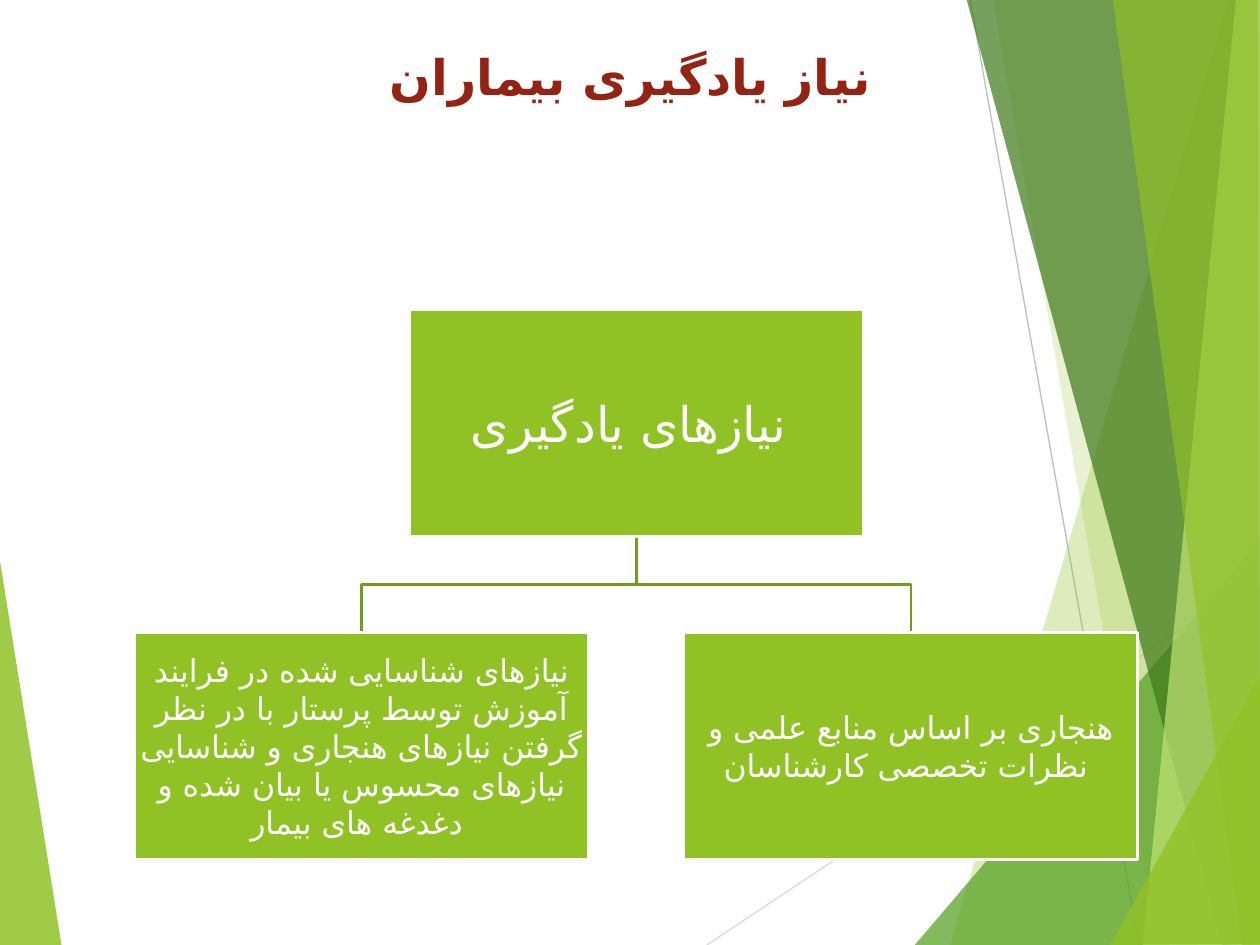
from lxml import etree
from pptx import Presentation
from pptx.dml.color import RGBColor
from pptx.enum.lang import MSO_LANGUAGE_ID
from pptx.enum.shapes import MSO_CONNECTOR, MSO_SHAPE
from pptx.enum.text import MSO_ANCHOR, PP_ALIGN
from pptx.oxml.ns import qn
from pptx.util import Inches, Pt

STRAIGHT = MSO_CONNECTOR.STRAIGHT
RECTANGLE = MSO_SHAPE.RECTANGLE
MIDDLE = MSO_ANCHOR.MIDDLE
CENTER = PP_ALIGN.CENTER
PERSIAN = MSO_LANGUAGE_ID.FARSI

GREEN, BRANCH_GREEN = "90C226", "739B1E"
WHITE, RED = "FFFFFF", "932313"
LINE_WIDTH = 1.5


def color(hex_string):
    return RGBColor.from_string(hex_string)


class SlideBuilder:
    """Holds the style and the current slide."""

    title_font = "Arial"
    body_font = "Roboto"
    persian_font = "DejaVu Sans"

    def __init__(self, presentation):
        self.slide = presentation.slides.add_slide(presentation.slide_layouts[5])
        self.shapes = self.slide.shapes

    def format_text(self, text_frame, text, size, font, hex_color, bold=False, inset=None):
        text_frame.text = text
        text_frame.word_wrap = True
        text_frame.vertical_anchor = MIDDLE
        if inset is not None:
            text_frame.margin_left = text_frame.margin_right = Inches(inset)
            text_frame.margin_top = text_frame.margin_bottom = Inches(inset)
        paragraph = text_frame.paragraphs[0]
        paragraph.alignment = CENTER
        run = paragraph.runs[0]
        run.font.size = Pt(size)
        run.font.bold = bold
        run.font.name = font
        run.font.language_id = PERSIAN
        run.font.color.rgb = color(hex_color)
        # Persian letters take their font from the complex-script entry
        complex_font = etree.SubElement(run.font._element, qn("a:cs"))
        complex_font.set("typeface", self.persian_font)

    def title(self, text, left, top, width, height):
        title = self.shapes.title
        title.left, title.top = Inches(left), Inches(top)
        title.width, title.height = Inches(width), Inches(height)
        self.format_text(title.text_frame, text, 28, self.title_font, RED, bold=True)
        # Bring the title in front of the backdrop
        title.element.getparent().append(title.element)

    def outline(self, points, close):
        start, *rest = [(round(x * 100), round(y * 100)) for x, y in points]
        builder = self.shapes.build_freeform(*start, scale=Inches(0.01))
        builder.add_line_segments(rest, close=close)
        shape = builder.convert_to_shape()
        shape.shadow.inherit = False
        return shape

    def facet(self, points, hex_color, opacity):
        shape = self.outline(points, close=True)
        shape.fill.solid()
        shape.fill.fore_color.rgb = color(hex_color)
        shape.line.fill.background()
        fill_color = shape.element.spPr.find(qn("a:solidFill"))[0]
        etree.SubElement(fill_color, qn("a:alpha")).set("val", str(opacity * 1000))

    def branch(self, points):
        shape = self.outline(points, close=False)
        shape.fill.background()
        shape.line.color.rgb = color(BRANCH_GREEN)
        shape.line.width = Pt(LINE_WIDTH)

    def line(self, start, end, hex_color):
        connector = self.shapes.add_connector(
            STRAIGHT, *(Inches(value) for value in (*start, *end)))
        connector.line.color.rgb = color(hex_color)
        connector.line.width = Pt(0.75)
        etree.SubElement(connector.element.spPr, qn("a:effectLst"))

    def box(self, text, left, top, width, height, size, inset):
        shape = self.shapes.add_shape(
            RECTANGLE, *(Inches(value) for value in (left, top, width, height)))
        shape.shadow.inherit = False
        shape.fill.solid()
        shape.fill.fore_color.rgb = color(GREEN)
        shape.line.color.rgb = color(WHITE)
        shape.line.width = Pt(LINE_WIDTH)
        self.format_text(shape.text_frame, text, size, self.body_font, WHITE, inset=inset)


# Backdrop facets: corner points, colour, opacity in percent
LEFT_FACET = ([(-0.01, 4.39), (0.49, 7.51), (-0.01, 7.5)], GREEN, 85)
RIGHT_FACETS = [
    ([(9.75, 0), (7.54, 7.5), (10.02, 7.51), (10.01, 0.01)], GREEN, 30),
    ([(7.88, -0.01), (9.19, 7.5), (10.01, 7.5), (10.01, -0.01)], GREEN, 20),
    ([(7.26, 7.5), (10, 4.29), (10.01, 7.5)], "54A021", 72),
    ([(7.67, -0.01), (9.7, 7.5), (10.01, 7.49), (10.01, -0.01)], "3F7819", 70),
    ([(9.81, -0.01), (9.07, 7.5), (10.01, 7.5), (10, -0.01)], "C0E474", 70),
    ([(8.83, -0.01), (9.86, 7.5), (10, 7.5), (9.98, -0.01)], GREEN, 65),
    ([(8.81, 7.5), (10.01, 5.35), (10.01, 7.49)], GREEN, 80),
]

# Tree geometry
BOX_WIDTH, BOX_HEIGHT = 3.6, 1.8
ROOT_CENTER, ROOT_TOP = 5.05, 2.46
CHILD_OFFSET, CHILD_TOP = 2.18, 5.02
ROOT_TEXT = "نیازهای یادگیری "
CHILD_TEXTS = [
    (-1, "نیازهای شناسایی شده در فرایند آموزش توسط پرستار با در نظر گرفتن "
         "نیازهای هنجاری و شناسایی نیازهای محسوس یا بیان شده و دغدغه های بیمار "),
    (1, "هنجاری بر اساس منابع علمی و نظرات تخصصی کارشناسان "),
]


def main():
    presentation = Presentation()
    presentation.slide_width, presentation.slide_height = Inches(10), Inches(7.5)
    builder = SlideBuilder(presentation)

    # Backdrop
    builder.facet(*LEFT_FACET)
    builder.line((5.61, 7.5), (10.01, 4.57), "D9D9D9")
    builder.line((7.7, 0), (9.04, 7.5), "BFBFBF")
    for facet in RIGHT_FACETS:
        builder.facet(*facet)

    builder.title("نیاز یادگیری بیماران", 0, 0.02, 10, 1.17)

    # Branches from the root to each child
    root_bottom = ROOT_TOP + BOX_HEIGHT
    middle = (root_bottom + CHILD_TOP) / 2
    for side in (1, -1):
        child_center = ROOT_CENTER + side * CHILD_OFFSET
        builder.branch([(ROOT_CENTER, root_bottom), (ROOT_CENTER, middle),
                        (child_center, middle), (child_center, CHILD_TOP)])

    # Boxes
    root_left = ROOT_CENTER - BOX_WIDTH / 2
    builder.box(ROOT_TEXT, root_left, ROOT_TOP, BOX_WIDTH, BOX_HEIGHT, 28, 0.02)
    for side, text in CHILD_TEXTS:
        builder.box(text, root_left + side * CHILD_OFFSET, CHILD_TOP,
                    BOX_WIDTH, BOX_HEIGHT, 18, 0.01)

    presentation.save("out.pptx")


if __name__ == "__main__":
    main()
